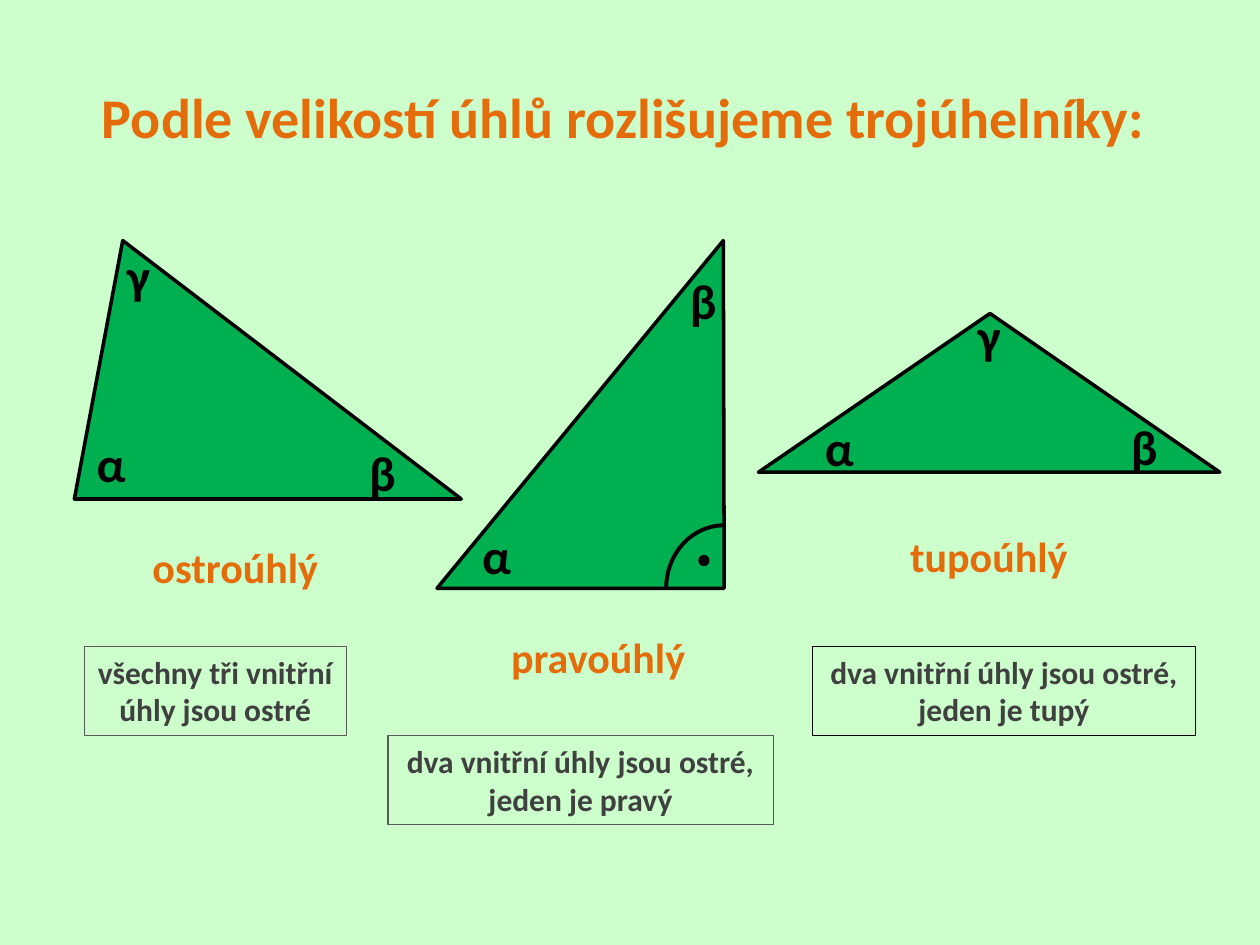
import math

import lxml.etree
import pptx
import pptx.dml.color
import pptx.enum.shapes
import pptx.enum.text
import pptx.util

Cm = pptx.util.Cm
Pt = pptx.util.Pt
RGBColor = pptx.dml.color.RGBColor
SHAPES = pptx.enum.shapes.MSO_SHAPE
ALIGN = pptx.enum.text.PP_ALIGN

BACKGROUND = RGBColor(0xCC, 0xFF, 0xCC)
ORANGE = RGBColor(0xE4, 0x6C, 0x0A)
GREEN = RGBColor(0x00, 0xB0, 0x50)
BLACK = RGBColor(0x00, 0x00, 0x00)
GREY = RGBColor(0x59, 0x59, 0x59)
DARK_GREY = RGBColor(0x40, 0x40, 0x40)

LABEL_HEIGHT = 1.45
NAME_HEIGHT = 1.27
DESCRIPTION_HEIGHT = 1.8
LABEL_WIDTHS = {"α": 1.09, "β": 1.07, "γ": 0.99}

TRIANGLES = [
    {
        "box": (1.5, 4.85, 7.8, 5.21),
        "apex": 0.125,
        "angles": [("α", 0.2, 3.76), ("β", 5.69, 3.94), ("γ", 0.81, -0.03)],
        "name": ("ostroúhlý", 1.3, 5.94, 3.89),
        "description": (["všechny tři vnitřní", "úhly jsou ostré"], 0.2, 8.18, 5.28, GREY),
    },
    {
        "box": (8.81, 4.85, 5.79, 7.01),
        "apex": 0.997,
        "angles": [("α", 0.66, 5.61), ("β", 4.85, 0.48)],
        "name": ("pravoúhlý", 1.22, 7.75, 4.06),
        "description": (["dva vnitřní úhly jsou ostré, jeden je pravý"], -0.99, 9.98, 7.77, GREY),
        "right_angle": True,
    },
    {
        "box": (15.29, 6.32, 9.3, 3.2),
        "apex": 0.502,
        "angles": [("α", 1.09, 1.98), ("β", 7.26, 1.96), ("γ", 4.17, -0.28)],
        "name": ("tupoúhlý", 2.79, 4.24, 3.71),
        "description": (["dva vnitřní úhly jsou ostré, jeden je tupý"], 1.09, 6.71, 7.72, BLACK),
    },
]


def write_text(text_frame, lines, size, color, alignment):
    for index, line in enumerate(lines):
        paragraph = text_frame.paragraphs[0] if index == 0 else text_frame.add_paragraph()
        paragraph.alignment = alignment
        run = paragraph.add_run()
        run.text = line
        run.font.name = "Calibri"
        run.font.size = Pt(size)
        run.font.bold = True
        run.font.color.rgb = color


def add_text(slide, box, lines, size, color, alignment, wrap=False):
    shape = slide.shapes.add_textbox(*map(Cm, box))
    shape.text_frame.word_wrap = wrap
    write_text(shape.text_frame, lines, size, color, alignment)
    return shape


def format_shape(shape, fill, line_width):
    shape.shadow.inherit = False
    if fill is None:
        shape.fill.background()
    else:
        shape.fill.solid()
        shape.fill.fore_color.rgb = fill
    shape.line.color.rgb = BLACK
    shape.line.width = Pt(line_width)


def add_title(slide, box):
    title = slide.shapes.title
    title.left, title.top, title.width, title.height = map(Cm, box)
    title.text_frame.vertical_anchor = pptx.enum.text.MSO_ANCHOR.MIDDLE
    write_text(title.text_frame, ["Podle velikostí úhlů rozlišujeme trojúhelníky: "],
               32, ORANGE, ALIGN.CENTER)


def add_right_angle(slide, box):
    left, top, width, height = box
    corner_x, corner_y = left + width, top + height
    radius_x, radius_y = 1.17, 1.27
    steps = 24
    angles = [math.pi / 2 * step / steps for step in range(steps + 1)]
    points = [(Cm(corner_x - radius_x * math.cos(angle)),
               Cm(corner_y - radius_y * math.sin(angle))) for angle in angles]
    builder = slide.shapes.build_freeform(*points[0])
    builder.add_line_segments(points[1:], close=False)
    format_shape(builder.convert_to_shape(), None, 2.25)

    dot = slide.shapes.add_shape(SHAPES.OVAL, Cm(corner_x - 0.51), Cm(corner_y - 0.66),
                                 Cm(0.2), Cm(0.2))
    format_shape(dot, BLACK, 0.75)


def add_triangle(slide, triangle):
    left, top, width, height = triangle["box"]
    shape = slide.shapes.add_shape(SHAPES.ISOSCELES_TRIANGLE, *map(Cm, triangle["box"]))
    shape.adjustments[0] = triangle["apex"]
    format_shape(shape, GREEN, 2)

    if triangle.get("right_angle"):
        add_right_angle(slide, triangle["box"])

    for letter, x, y in triangle["angles"]:
        add_text(slide, (left + x, top + y, LABEL_WIDTHS[letter], LABEL_HEIGHT),
                 [letter], 28, BLACK, ALIGN.LEFT)

    name, x, y, name_width = triangle["name"]
    add_text(slide, (left + x, top + y, name_width, NAME_HEIGHT),
             [name], 24, ORANGE, ALIGN.CENTER)

    lines, x, y, description_width, border = triangle["description"]
    description = add_text(slide, (left + x, top + y, description_width, DESCRIPTION_HEIGHT),
                           lines, 18, DARK_GREY, ALIGN.CENTER, wrap=len(lines) == 1)
    description.line.color.rgb = border
    description.line.width = Pt(0.75)


def main():
    presentation = pptx.Presentation()
    presentation.slide_width = Cm(25.4)
    presentation.slide_height = Cm(19.05)
    slide = presentation.slides.add_slide(presentation.slide_layouts[5])
    slide.background.fill.solid()
    slide.background.fill.fore_color.rgb = BACKGROUND
    add_title(slide, (1.27, 0.76, 22.86, 3.18))
    for triangle in TRIANGLES:
        add_triangle(slide, triangle)
    presentation.save("out.pptx")


if __name__ == "__main__":
    main()
